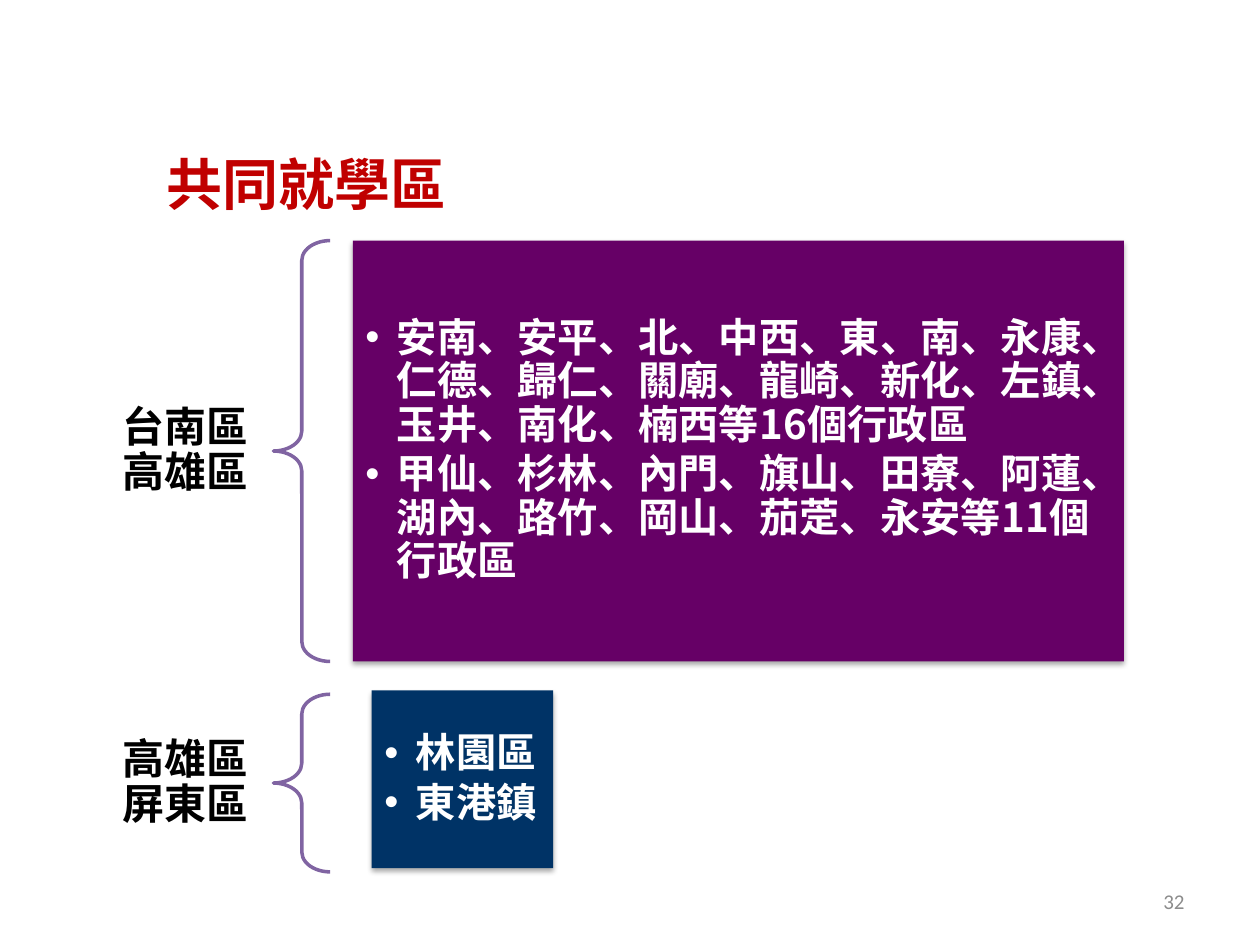
from dataclasses import dataclass

from lxml import etree
from pptx import Presentation
from pptx.dml.color import RGBColor
from pptx.enum.shapes import MSO_SHAPE
from pptx.enum.text import MSO_ANCHOR, MSO_AUTO_SIZE, PP_ALIGN
from pptx.oxml.ns import qn
from pptx.util import Inches, Pt

BRACE = MSO_SHAPE.LEFT_BRACE
MIDDLE = MSO_ANCHOR.MIDDLE
FIXED = MSO_AUTO_SIZE.NONE
CENTER, RIGHT = PP_ALIGN.CENTER, PP_ALIGN.RIGHT

HAN, LATIN = "Noto Sans CJK SC", "Calibri"
RED = RGBColor(0xC0, 0x00, 0x00)
BLACK = RGBColor(0x00, 0x00, 0x00)
WHITE = RGBColor(0xFF, 0xFF, 0xFF)
GREY = RGBColor(0x8C, 0x8C, 0x8C)
LILAC = RGBColor(0x80, 0x64, 0xA2)
PURPLE = RGBColor(0x66, 0x00, 0x66)
NAVY = RGBColor(0x00, 0x33, 0x66)

LABEL_X, LABEL_W, LABEL_H = 0.78, 1.39, 1.41
BRACE_X, BRACE_W = 2.17, 0.45


@dataclass
class Box:
    x: float
    y: float
    w: float
    h: float


@dataclass
class Zone:
    label: str
    top: float
    height: float
    panel: Box
    fill: RGBColor
    items: list[str]


ZONES = [
    Zone("台南區高雄區", 1.91, 3.34, Box(2.8, 1.91, 6.12, 3.34), PURPLE, [
        "安南、安平、北、中西、東、南、永康、仁德、歸仁、關廟、龍崎、新化、左鎮、"
        "玉井、南化、楠西等16個行政區",
        "甲仙、杉林、內門、旗山、田寮、阿蓮、湖內、路竹、岡山、茄萣、永安等11個行政區",
    ]),
    Zone("高雄區屏東區", 5.51, 1.41, Box(2.95, 5.48, 1.44, 1.41), NAVY,
         ["林園區", "東港鎮"]),
]


def place(shape, box: Box) -> None:
    shape.left, shape.top = Inches(box.x), Inches(box.y)
    shape.width, shape.height = Inches(box.w), Inches(box.h)


def set_frame(frame, side: float = 0.1, edge: float = 0.05) -> None:
    frame.word_wrap = True
    frame.auto_size = FIXED
    frame.vertical_anchor = MIDDLE
    frame.margin_left = frame.margin_right = Inches(side)
    frame.margin_top = frame.margin_bottom = Inches(edge)


def add_run(para, text: str, size: float, color: RGBColor,
            face: str = HAN, bold: bool = True) -> None:
    run = para.add_run()
    run.text = text
    font = run.font
    font.size, font.bold, font.name = Pt(size), bold, face
    font.color.rgb = color
    east = etree.SubElement(run._r.get_or_add_rPr(), qn("a:ea"))
    east.set("typeface", face)


def add_text(slide, box: Box):
    shape = slide.shapes.add_textbox(0, 0, 0, 0)
    place(shape, box)
    return shape.text_frame


def add_shadow(shape) -> None:
    effects = etree.SubElement(shape._element.spPr, qn("a:effectLst"))
    outer = etree.SubElement(effects, qn("a:outerShdw"), blurRad="40000",
                             dist="23000", dir="5400000", rotWithShape="0")
    color = etree.SubElement(outer, qn("a:srgbClr"), val="000000")
    etree.SubElement(color, qn("a:alpha"), val="35000")


def set_bullet(para) -> None:
    props = para._p.get_or_add_pPr()
    props.set("marL", str(Inches(0.25)))
    props.set("indent", str(-Inches(0.25)))
    etree.SubElement(props, qn("a:buChar"), char="•")


def draw_label(slide, zone: Zone) -> None:
    top = zone.top + (zone.height - LABEL_H) / 2
    frame = add_text(slide, Box(LABEL_X, top, LABEL_W, LABEL_H))
    set_frame(frame, 0.19, 0.07)
    para = frame.paragraphs[0]
    para.alignment, para.line_spacing = CENTER, 0.9
    add_run(para, zone.label, 24, BLACK)


def draw_brace(slide, zone: Zone) -> None:
    brace = slide.shapes.add_shape(BRACE, 0, 0, 0, 0)
    place(brace, Box(BRACE_X, zone.top, BRACE_W, zone.height))
    brace.adjustments[0], brace.adjustments[1] = 0.35, 0.5
    brace.fill.background()
    brace.line.color.rgb, brace.line.width = LILAC, Pt(2)
    brace.shadow.inherit = False


def fill_panel(panel, zone: Zone) -> None:
    place(panel, zone.panel)
    panel.fill.solid()
    panel.fill.fore_color.rgb = zone.fill
    add_shadow(panel)
    frame = panel.text_frame
    set_frame(frame, 0.1, 0.1)
    for i, item in enumerate(zone.items):
        para = frame.add_paragraph() if i else frame.paragraphs[0]
        para.level, para.line_spacing = 1, 0.9
        para.space_before, para.space_after = Pt(0), Pt(3.45)
        set_bullet(para)
        add_run(para, item, 23, WHITE)


def main() -> None:
    deck = Presentation()
    deck.slide_width, deck.slide_height = Inches(10), Inches(7.5)
    slide = deck.slides.add_slide(deck.slide_layouts.get_by_name("Two Content"))
    title, *panels = slide.placeholders

    place(title, Box(0.59, 0.99, 3.69, 0.93))
    set_frame(title.text_frame)
    para = title.text_frame.paragraphs[0]
    para.alignment = CENTER
    add_run(para, "共同就學區", 32, RED)

    for zone, panel in zip(ZONES, panels):
        draw_label(slide, zone)
        draw_brace(slide, zone)
        fill_panel(panel, zone)

    frame = add_text(slide, Box(7.17, 6.95, 2.33, 0.4))
    set_frame(frame)
    para = frame.paragraphs[0]
    para.alignment = RIGHT
    add_run(para, "32", 12, GREY, LATIN, False)

    deck.save("out.pptx")


if __name__ == "__main__":
    main()
